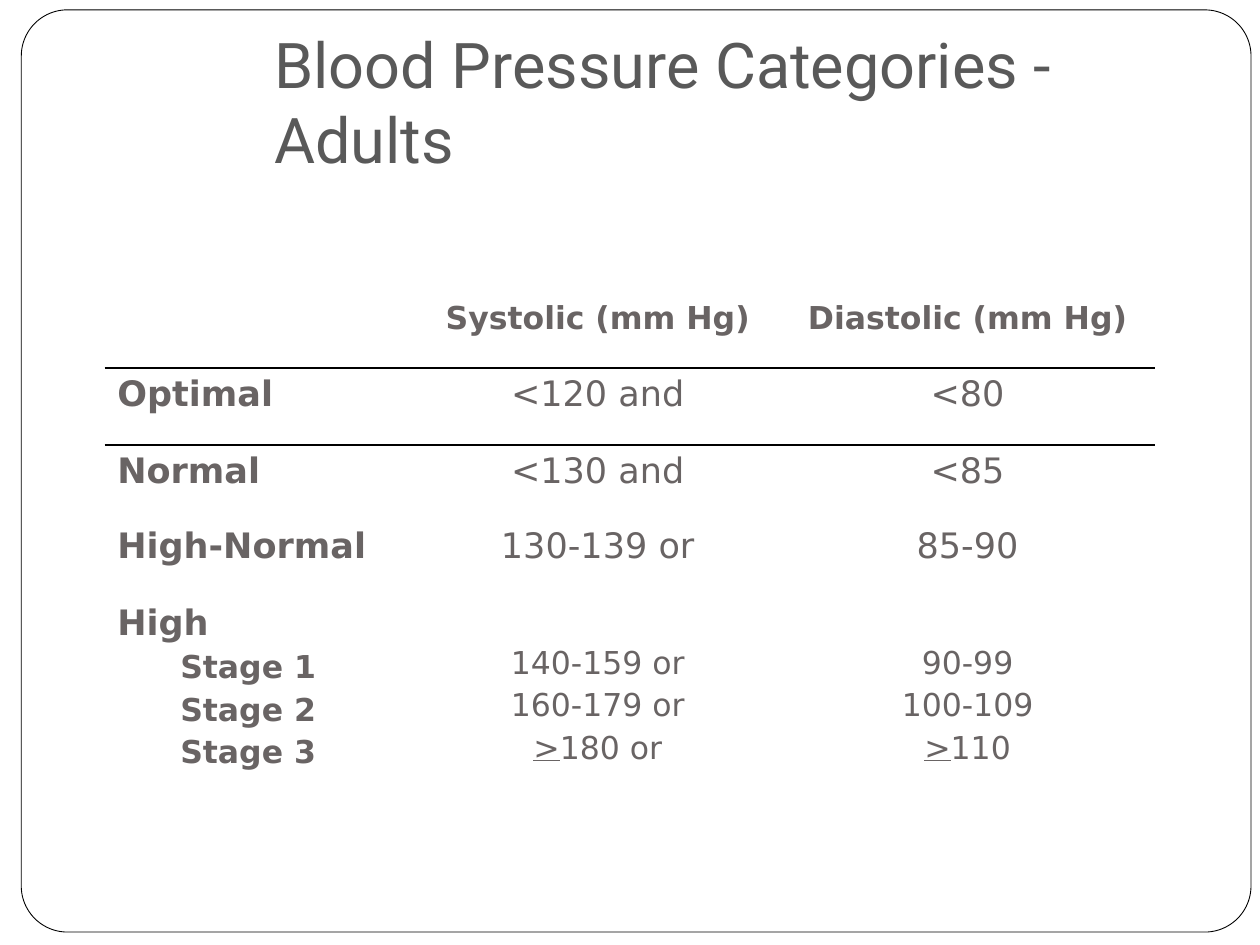
from lxml import etree
from pptx import Presentation
from pptx.dml.color import RGBColor
from pptx.enum.shapes import MSO_SHAPE
from pptx.enum.text import MSO_ANCHOR, MSO_AUTO_SIZE, PP_ALIGN
from pptx.oxml.ns import qn
from pptx.util import Cm, Pt

ROUNDED = MSO_SHAPE.ROUNDED_RECTANGLE
BOTTOM = MSO_ANCHOR.BOTTOM
NO_AUTOFIT = MSO_AUTO_SIZE.NONE
LEFT, CENTER = PP_ALIGN.LEFT, PP_ALIGN.CENTER
WHITE = RGBColor(0xFF, 0xFF, 0xFF)
BLACK = RGBColor(0x00, 0x00, 0x00)
TITLE_GRAY = RGBColor(0x59, 0x59, 0x59)
TABLE_GRAY = RGBColor(0x69, 0x64, 0x64)
NO_STYLE = "{2D5ABB26-0587-4C30-8999-92F81FD0307C}"


def add_text(paragraph, text, size=18, font="DejaVu Sans", color=TABLE_GRAY,
             bold=False, underline=False, align=CENTER):
    paragraph.alignment = align
    run = paragraph.add_run()
    run.text = text
    run.font.name = font
    run.font.size = Pt(size)
    run.font.bold = bold
    run.font.underline = underline
    run.font.color.rgb = color


def add_border(cell, side):
    line = etree.Element(qn(f"a:{side}"), w=str(Pt(1)))
    fill = etree.SubElement(line, qn("a:solidFill"))
    etree.SubElement(fill, qn("a:srgbClr"), val=str(BLACK))
    cell._tc.get_or_add_tcPr().insert(0, line)


presentation = Presentation()
presentation.slide_width = Cm(25.4)
presentation.slide_height = Cm(19.05)
slide = presentation.slides.add_slide(presentation.slide_layouts[5])

title = slide.shapes.title
title.left, title.top, title.width, title.height = Cm(5.28), Cm(1.47), Cm(19.05), Cm(2.34)
title_frame = title.text_frame
title_frame.word_wrap = True
title_frame.auto_size = NO_AUTOFIT
title_frame.vertical_anchor = BOTTOM
title_frame.margin_left = title_frame.margin_right = title_frame.margin_bottom = Cm(0.25)
title_frame.margin_top = Cm(0.13)
add_text(title_frame.paragraphs[0], "Blood Pressure Categories - Adults",
         size=36, font="Roboto", color=TITLE_GRAY, align=LEFT)

panel = slide.shapes.add_shape(ROUNDED, Cm(0.43), Cm(0.2), Cm(24.79), Cm(18.59))
panel.adjustments[0] = 0.05
panel.shadow.inherit = False
panel.fill.solid()
panel.fill.fore_color.rgb = WHITE
panel.line.color.rgb = BLACK
panel.line.width = Pt(0.5)
title.element.addprevious(panel.element)

column_widths = [6.27, 7.34, 7.57]
row_heights = [1.5, 1.55, 1.5, 1.55, 5.79]
table = slide.shapes.add_table(5, 3, Cm(2.11), Cm(5.92), Cm(21.18), Cm(11.89)).table
table.first_row = table.horz_banding = False
table._tbl.tblPr.find(qn("a:tableStyleId")).text = NO_STYLE
for column, width in zip(table.columns, column_widths):
    column.width = Cm(width)
for row, height in zip(table.rows, row_heights):
    row.height = Cm(height)

for row_index, row in enumerate(table.rows):
    for cell in row.cells:
        cell.fill.background()
        if row_index == 0:
            add_border(cell, "lnB")
        elif row_index == 1:
            add_border(cell, "lnT")

for column_index, heading in enumerate(["Systolic (mm Hg)", "Diastolic (mm Hg)"], 1):
    add_text(table.cell(0, column_index).text_frame.paragraphs[0], heading, bold=True)

categories = [
    ("Optimal", "<120 and", "<80"),
    ("Normal", "<130 and", "<85"),
    ("High-Normal", "130-139 or", "85-90"),
    ("High", "", ""),
]
for row_index, values in enumerate(categories, 1):
    for column_index, value in enumerate(values):
        if value:
            is_label = column_index == 0
            add_text(table.cell(row_index, column_index).text_frame.paragraphs[0], value,
                     size=20, bold=is_label, align=LEFT if is_label else CENTER)

stages = [
    ("Stage 1", "140-159 or", "90-99"),
    ("Stage 2", "160-179 or", "100-109"),
    ("Stage 3", ">180 or", ">110"),
]
for stage_index, values in enumerate(stages):
    for column_index, value in enumerate(values):
        cell = table.cell(4, column_index)
        frame = cell.text_frame
        is_label = column_index == 0
        is_first = stage_index == 0 and not is_label
        paragraph = frame.paragraphs[0] if is_first else frame.add_paragraph()
        if is_first:
            cell.margin_top = Cm(0.98)
        else:
            paragraph.space_before = Pt(3.5)
        if is_label:
            paragraph.level = 1
            properties = paragraph._p.get_or_add_pPr()
            properties.set("marL", str(Cm(1.27)))
            properties.set("indent", "0")
        if value.startswith(">"):
            add_text(paragraph, ">", underline=True)
            value = value[1:]
        add_text(paragraph, value, bold=is_label, align=LEFT if is_label else CENTER)

presentation.save("out.pptx")
